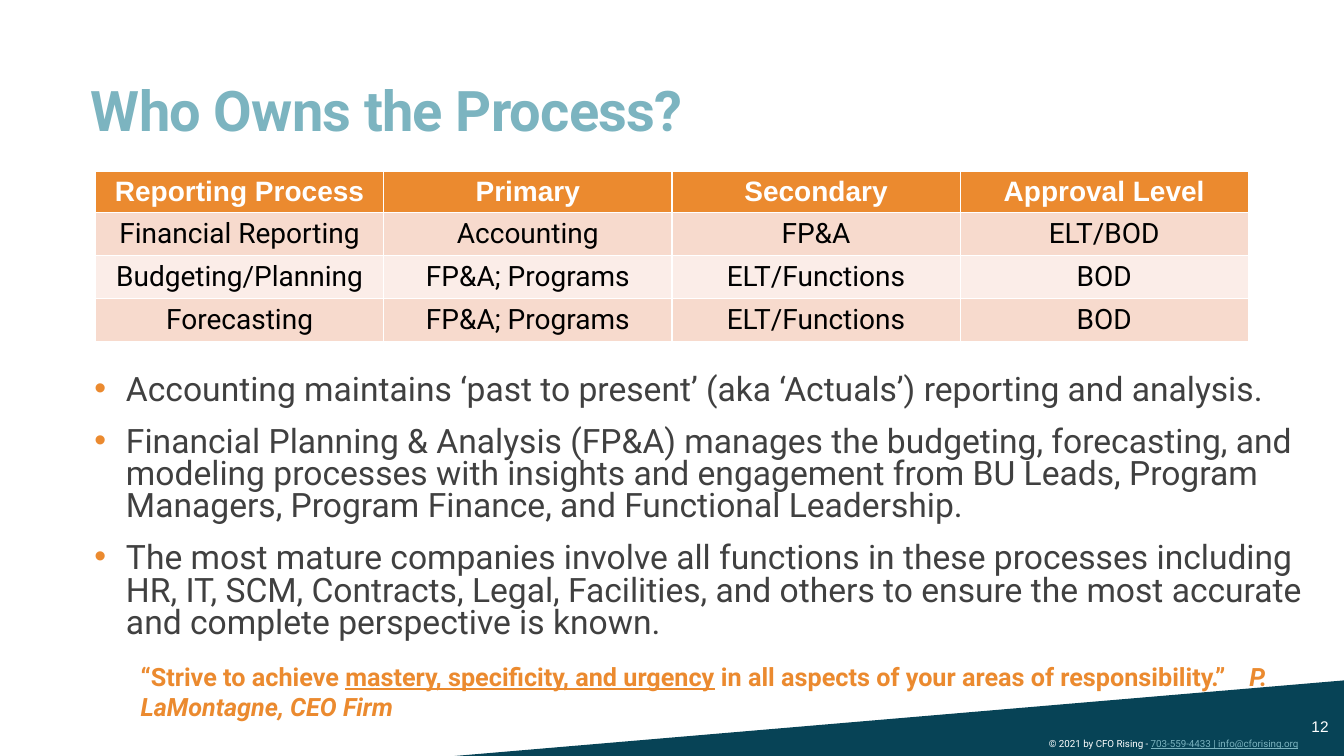
from dataclasses import dataclass

from lxml import etree
from pptx import Presentation
from pptx import util as u
from pptx.dml.color import RGBColor
from pptx.enum import shapes, text
from pptx.oxml import ns

EMU_PER_PX = 9525
COLORS = {
    "white": "FFFFFF",
    "black": "000000",
    "teal": "7CB4C0",
    "navy": "074356",
    "orange": "EB8A2F",
    "body": "404040",
    "band_dark": "F7DACD",
    "band_light": "FBEDE8",
}


@dataclass(frozen=True)
class Box:
    left: int
    top: int
    width: int
    height: int

    def emu(self) -> list[u.Emu]:
        return [px(n) for n in (self.left, self.top, self.width, self.height)]


@dataclass(frozen=True)
class Style:
    size: int
    color: str
    name: str = "Roboto"
    bold: bool = False


@dataclass(frozen=True)
class Span:
    words: str
    underline: bool = False
    italic: bool = False
    color: str = ""


@dataclass(frozen=True)
class Note:
    box: Box
    style: Style
    spans: tuple[Span, ...]
    side_inset: int = 10
    anchor: text.MSO_ANCHOR = text.MSO_ANCHOR.TOP
    tab: int = 0


TITLE = "Who Owns the Process?"
TABLE_BOX = Box(91, 163, 1098, 156)
ROWS = (
    ("Reporting Process", "Primary", "Secondary", "Approval Level"),
    ("Financial Reporting", "Accounting", "FP&A", "ELT/BOD"),
    ("Budgeting/Planning", "FP&A; Programs", "ELT/Functions", "BOD"),
    ("Forecasting", "FP&A; Programs", "ELT/Functions", "BOD"),
)
BULLETS = (
    "Accounting maintains ‘past to present’ (aka ‘Actuals’) reporting and analysis.",
    "Financial Planning & Analysis (FP&A) manages the budgeting, forecasting, and "
    "modeling processes with insights and engagement from BU Leads, Program "
    "Managers, Program Finance, and Functional Leadership.",
    "The most mature companies involve all functions in these processes including "
    "HR, IT, SCM, Contracts, Legal, Facilities, and others to ensure the most "
    "accurate and complete perspective is known.",
)
NOTES = (
    Note(
        Box(989, 698, 396, 33),
        Style(7, "white"),
        (
            Span("© 2021 by CFO Rising - "),
            Span("703-559-4433 | info@cforising.org", underline=True, color="teal"),
        ),
    ),
    Note(
        Box(1239, 673, 137, 38),
        Style(11, "white", "Arial"),
        (Span("12"),),
        anchor=text.MSO_ANCHOR.MIDDLE,
    ),
    Note(
        Box(134, 625, 1095, 69),
        Style(18, "orange", bold=True),
        (
            Span("“Strive to achieve "),
            Span("mastery, specificity, and urgency", underline=True),
            Span(" in all aspects of your areas of responsibility.”\t"),
            Span("P. LaMontagne, CEO Firm", italic=True),
        ),
        side_inset=0,
        tab=1056,
    ),
)


def px(length: int) -> u.Emu:
    return u.Emu(length * EMU_PER_PX)


def rgb(color: str) -> RGBColor:
    return RGBColor.from_string(COLORS[color])


def apply_style(font, style: Style) -> None:
    font.name = style.name
    font.size = u.Pt(style.size)
    font.bold = style.bold
    font.color.rgb = rgb(style.color)


def place(shape, box: Box) -> None:
    shape.left, shape.top, shape.width, shape.height = box.emu()


def add_bullet(paragraph) -> None:
    properties = paragraph._p.get_or_add_pPr()
    properties.set("marL", str(px(70)))
    properties.set("indent", str(px(-30)))
    color = etree.SubElement(properties, ns.qn("a:buClr"))
    etree.SubElement(color, ns.qn("a:srgbClr"), val=COLORS["orange"])
    etree.SubElement(properties, ns.qn("a:buFont"), typeface="Arial")
    etree.SubElement(properties, ns.qn("a:buChar"), char="•")


def fill_title(title) -> None:
    place(title, Box(77, 54, 1070, 87))
    frame = title.text_frame
    frame.auto_size = text.MSO_AUTO_SIZE.NONE
    frame.vertical_anchor = text.MSO_ANCHOR.BOTTOM
    paragraph = frame.paragraphs[0]
    run = paragraph.add_run()
    run.text = TITLE
    run._r.get_or_add_rPr().set("spc", "-50")
    paragraph.alignment = text.PP_ALIGN.LEFT
    paragraph.line_spacing = 0.85
    apply_style(paragraph.font, Style(40, "teal", bold=True))


def fill_body(body) -> None:
    place(body, Box(50, 353, 1198, 297))
    frame = body.text_frame
    frame.auto_size = text.MSO_AUTO_SIZE.NONE
    frame.margin_left = frame.margin_right = 0
    for index, words in enumerate(BULLETS):
        paragraph = frame.add_paragraph() if index else frame.paragraphs[0]
        paragraph.text = words
        paragraph.level = 2
        add_bullet(paragraph)
        paragraph.line_spacing = 0.8
        paragraph.space_before = u.Pt(2 if index else 0)
        paragraph.space_after = u.Pt(12)
        apply_style(paragraph.font, Style(24, "body"))


def add_owner_table(slide) -> None:
    table = slide.shapes.add_table(len(ROWS), len(ROWS[0]), *TABLE_BOX.emu()).table
    for row, names in enumerate(ROWS):
        if row == 0:
            fill, style = "orange", Style(20, "white", "Arial", True)
        else:
            fill = "band_dark" if row % 2 else "band_light"
            style = Style(20, "black")
        for column, words in enumerate(names):
            cell = table.cell(row, column)
            cell.fill.solid()
            cell.fill.fore_color.rgb = rgb(fill)
            cell.text = words
            paragraph = cell.text_frame.paragraphs[0]
            paragraph.alignment = text.PP_ALIGN.CENTER
            apply_style(paragraph.font, style)


def add_corner(slide) -> None:
    corner = slide.shapes.add_shape(
        shapes.MSO_SHAPE.RIGHT_TRIANGLE, *Box(433, 648, 847, 72).emu()
    )
    corner.element.spPr.get_or_add_xfrm().set("flipH", "1")
    corner.shadow.inherit = False
    corner.fill.solid()
    corner.fill.fore_color.rgb = rgb("navy")
    corner.line.fill.background()


def add_note(slide, note: Note) -> None:
    frame = slide.shapes.add_textbox(*note.box.emu()).text_frame
    frame.word_wrap = True
    frame.vertical_anchor = note.anchor
    frame.margin_left = frame.margin_right = px(note.side_inset)
    paragraph = frame.paragraphs[0]
    if note.tab:
        tabs = etree.SubElement(paragraph._p.get_or_add_pPr(), ns.qn("a:tabLst"))
        etree.SubElement(tabs, ns.qn("a:tab"), pos=str(px(note.tab)), algn="l")
    apply_style(paragraph.font, note.style)
    for span in note.spans:
        run = paragraph.add_run()
        run.text = span.words
        if span.underline:
            run.font.underline = True
        if span.italic:
            run.font.italic = True
        if span.color:
            run.font.color.rgb = rgb(span.color)


def main() -> None:
    presentation = Presentation()
    presentation.slide_width, presentation.slide_height = px(1280), px(720)
    slide = presentation.slides.add_slide(presentation.slide_layouts[1])
    fill_title(slide.shapes.title)
    fill_body(slide.placeholders[1])
    add_corner(slide)
    add_owner_table(slide)
    for note in NOTES:
        add_note(slide, note)
    presentation.save("out.pptx")


if __name__ == "__main__":
    main()
